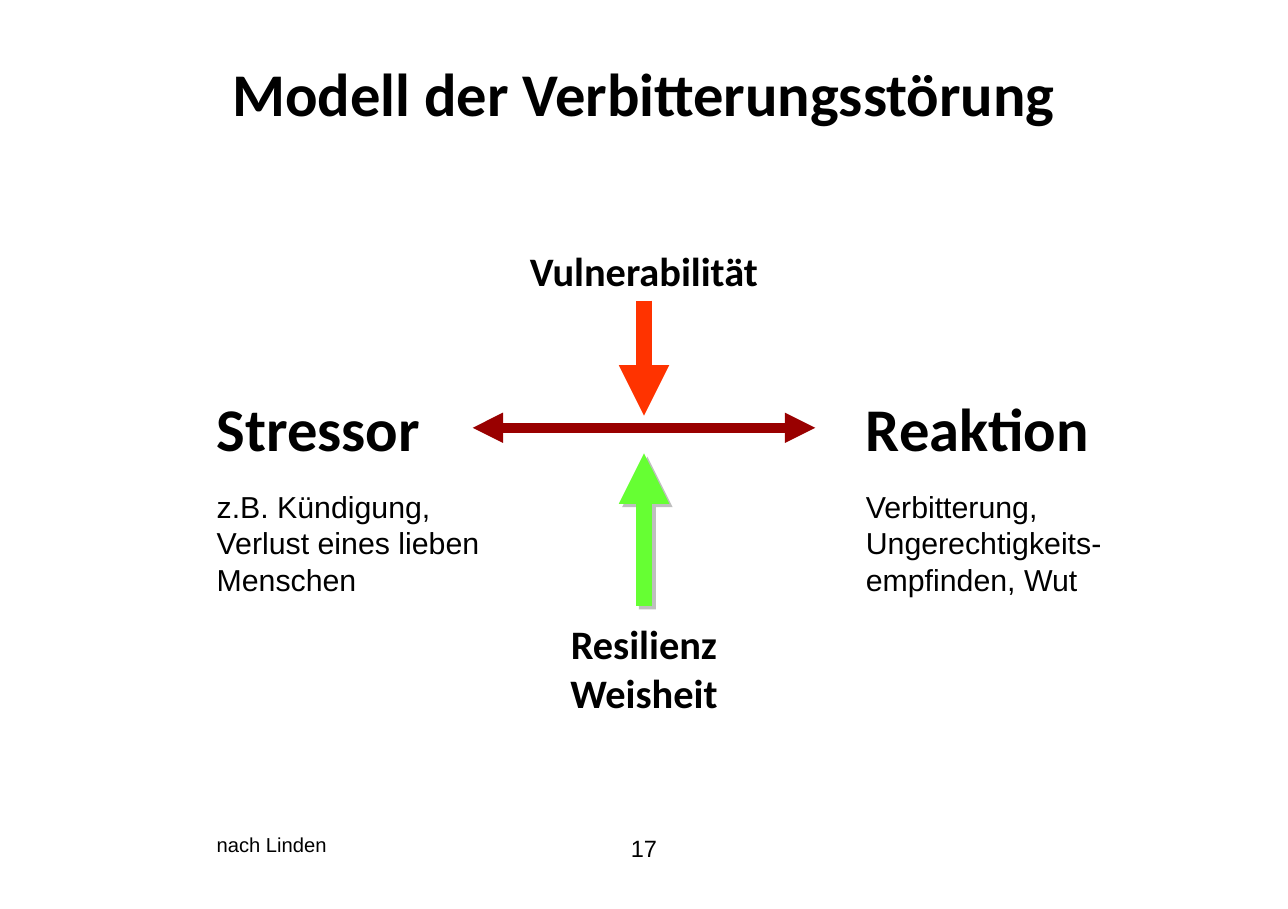
import dataclasses

import lxml.etree
import pptx
import pptx.dml.color
import pptx.enum.shapes
import pptx.enum.text
import pptx.oxml
import pptx.oxml.ns
import pptx.util

ALIGN = pptx.enum.text.PP_ALIGN
ANCHOR = pptx.enum.text.MSO_ANCHOR
AUTO_SIZE = pptx.enum.text.MSO_AUTO_SIZE


@dataclasses.dataclass(frozen=True)
class Theme:
    heading_font: str = "Calibri"
    body_font: str = "Arial"
    text: str = "000000"
    axis: str = "990000"
    vulnerability: str = "FF3300"
    resilience: str = "66FF33"
    shadow: str = "808080"
    title_size: int = 36
    factor_size: int = 24
    detail_size: int = 18
    number_size: int = 14
    source_size: int = 12
    axis_width: int = 6
    factor_width: int = 10


@dataclasses.dataclass(frozen=True)
class Box:
    left: float
    top: float
    width: float
    height: float

    def point(self, x, y):
        """Turn percentages of this box into a position."""
        return self.left + self.width * x / 100, self.top + self.height * y / 100

    def area(self, x, y, width, height):
        """Turn percentages of this box into a smaller box."""
        return Box(*self.point(x, y), self.width * width / 100, self.height * height / 100)


THEME = Theme()
PAGE = Box(0, 0, 10.63, 7.5)


def add_text(slide, box, text, size, font=THEME.body_font, bold=False,
             align=ALIGN.LEFT, anchor=ANCHOR.TOP, grow=True):
    lengths = [pptx.util.Inches(v) for v in dataclasses.astuple(box)]
    frame = slide.shapes.add_textbox(*lengths).text_frame
    frame.word_wrap = True
    frame.auto_size = AUTO_SIZE.SHAPE_TO_FIT_TEXT if grow else AUTO_SIZE.NONE
    frame.vertical_anchor = anchor
    paragraph = frame.paragraphs[0]
    paragraph.text = text
    paragraph.alignment = align
    for run in paragraph.runs:
        run.font.name = font
        run.font.size = pptx.util.Pt(size)
        run.font.bold = bold
        run.font.color.rgb = pptx.dml.color.RGBColor.from_string(THEME.text)


def add_arrow(slide, start, end, color, width, both_ends=False, shadow=False):
    ends = [pptx.util.Inches(v) for v in (*start, *end)]
    arrow = slide.shapes.add_connector(pptx.enum.shapes.MSO_CONNECTOR.STRAIGHT, *ends)
    arrow.line.width = pptx.util.Pt(width)
    arrow.line.color.rgb = pptx.dml.color.RGBColor.from_string(color)

    # Arrowheads
    qn = pptx.oxml.ns.qn
    properties = arrow._element.spPr
    line = properties.find(qn("a:ln"))
    for tag in ("a:headEnd", "a:tailEnd") if both_ends else ("a:tailEnd",):
        lxml.etree.SubElement(line, qn(tag), type="triangle")

    # Effect list: empty unless a shadow is asked for
    effects = lxml.etree.SubElement(properties, qn("a:effectLst"))
    if shadow:
        outer = lxml.etree.SubElement(
            effects, qn("a:outerShdw"), dist=str(int(pptx.util.Pt(2.8))),
            dir=str(45 * 60000), algn="ctr", rotWithShape="0")
        tint = lxml.etree.SubElement(outer, qn("a:srgbClr"), val=THEME.shadow)
        lxml.etree.SubElement(tint, qn("a:alpha"), val="50000")


def draw_title(slide, box):
    add_text(slide, box, "Modell der Verbitterungsstörung", THEME.title_size,
             font=THEME.heading_font, bold=True, align=ALIGN.CENTER,
             anchor=ANCHOR.MIDDLE, grow=False)


def draw_model(slide, box):
    column = 33.7
    middle = 50 - column / 2

    # Axis between stressor and reaction
    add_arrow(slide, box.point(30.5, 38.75), box.point(69.5, 38.75),
              THEME.axis, THEME.axis_width, both_ends=True)

    # Factors acting on the axis from above and below
    factors = [
        ("Vulnerabilität", 0, 12.5, 12.5, 36.25, THEME.vulnerability, False),
        ("Resilienz\nWeisheit", 77, 22.5, 75.5, 44, THEME.resilience, True),
    ]
    for label, top, height, start, end, color, shadow in factors:
        add_arrow(slide, box.point(50, start), box.point(50, end),
                  color, THEME.factor_width, shadow=shadow)
        add_text(slide, box.area(middle, top, column, height), label, THEME.factor_size,
                 font=THEME.heading_font, bold=True, align=ALIGN.CENTER)

    # Both sides: heading and details
    sides = [
        (0, 27.2, "Stressor", "z.B. Kündigung, Verlust eines lieben Menschen"),
        (73.9, 34.8, "Reaktion", "Verbitterung,\nUngerechtigkeits-\nempfinden, Wut"),
    ]
    for left, width, heading, details in sides:
        add_text(slide, box.area(left, 30, width, 17.5), heading, THEME.title_size,
                 font=THEME.heading_font, bold=True)
        add_text(slide, box.area(left, 50, column, 25), details, THEME.detail_size)


def draw_footer(slide, box):
    add_text(slide, box.area(0, 0, 43.4, 57), "nach Linden", THEME.source_size)
    add_text(slide, box.area(26.75, 2, 46.5, 98), "17", THEME.number_size,
             align=ALIGN.CENTER, grow=False)


def main():
    deck = pptx.Presentation()
    deck.slide_width = pptx.util.Inches(PAGE.width)
    deck.slide_height = pptx.util.Inches(PAGE.height)
    slide = deck.slides.add_slide(deck.slide_layouts[6])
    draw_title(slide, PAGE.area(5, 4, 90, 12.4))
    draw_model(slide, PAGE.area(15.9, 26.4, 68.2, 53.33))
    draw_footer(slide, PAGE.area(15.9, 90.9, 68.2, 7))
    deck.save("out.pptx")


if __name__ == "__main__":
    main()
